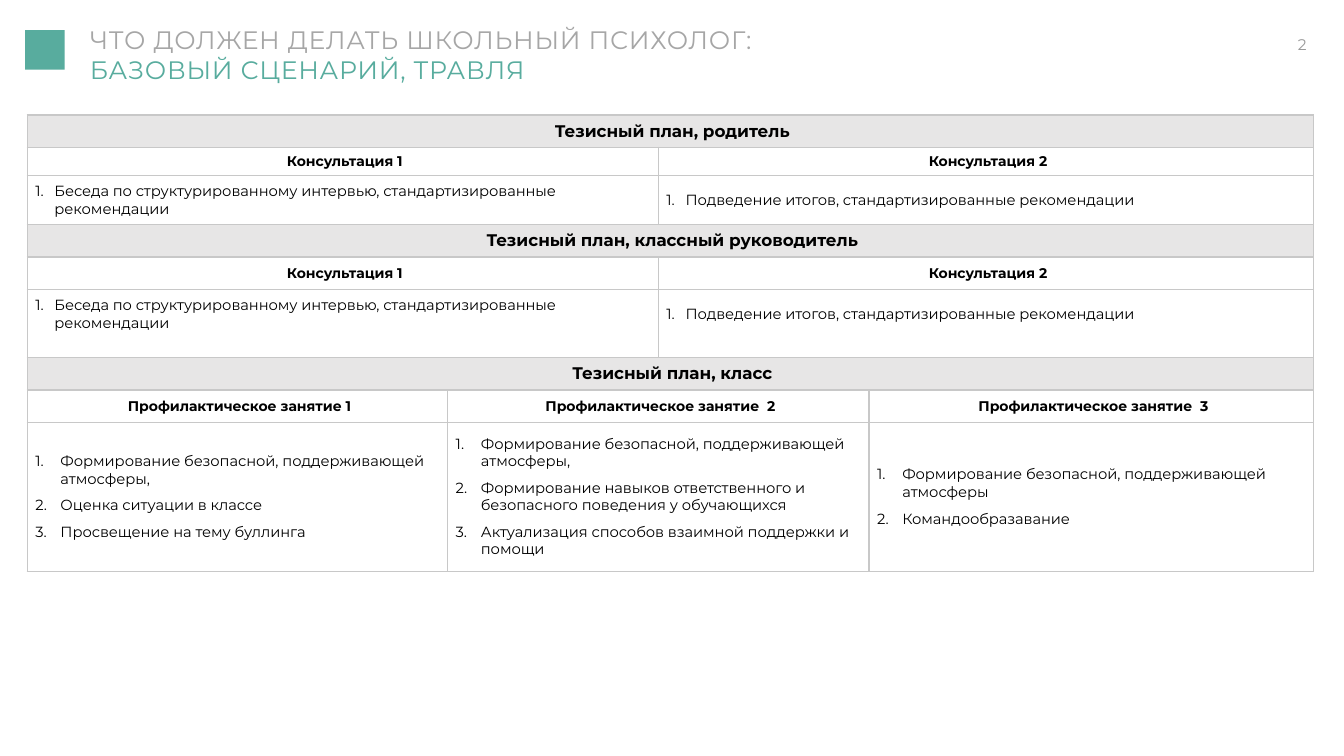
from lxml.etree import SubElement
from pptx import Presentation
from pptx.dml.color import RGBColor
from pptx.enum.shapes import MSO_SHAPE as Shape
from pptx.enum.text import MSO_ANCHOR as Anchor, MSO_AUTO_SIZE as AutoSize, PP_ALIGN as Align
from pptx.oxml.ns import qn
from pptx.util import Inches, Pt

GREEN = RGBColor(0x58, 0xAC, 0x9E)
TITLE_GREY = RGBColor(0xA6, 0xA6, 0xA6)
NUMBER_GREY = RGBColor(0x99, 0x99, 0x99)
BAND_GREY = RGBColor(0xE7, 0xE6, 0xE6)
BORDER_GREY = RGBColor(0xC8, 0xC8, 0xC8)
WHITE = RGBColor(0xFF, 0xFF, 0xFF)
BLACK = RGBColor(0x00, 0x00, 0x00)

CONSULTATIONS = ["Консультация 1", "Консультация 2"]
CONSULTATION_TOPICS = [
    ["Беседа по структурированному интервью, стандартизированные рекомендации"],
    ["Подведение итогов, стандартизированные рекомендации"],
]
LESSONS = [
    "Профилактическое занятие 1",
    "Профилактическое занятие  2",
    "Профилактическое занятие  3",
]
LESSON_TOPICS = [
    [
        "Формирование безопасной, поддерживающей атмосферы,",
        "Оценка ситуации в классе",
        "Просвещение на тему буллинга",
    ],
    [
        "Формирование безопасной, поддерживающей атмосферы,",
        "Формирование навыков ответственного и безопасного поведения у обучающихся",
        "Актуализация способов взаимной поддержки и помощи",
    ],
    [
        "Формирование безопасной, поддерживающей атмосферы",
        "Командообразавание",
    ],
]
PLANS = [
    ("Тезисный план, родитель", CONSULTATIONS, CONSULTATION_TOPICS, 0.04),
    ("Тезисный план, классный руководитель", CONSULTATIONS, CONSULTATION_TOPICS, 0.22),
    ("Тезисный план, класс", LESSONS, LESSON_TOPICS, 0.04),
]
COLUMN_WIDTHS = [4.17, 2.09, 2.09, 4.41]
ROW_HEIGHTS = [0.32, 0.28, 0.49, 0.32, 0.32, 0.68, 0.32, 0.32, 1.48]
SPANS = {1: [(0, 3)], 2: [(0, 1), (2, 3)], 3: [(0, 0), (1, 2), (3, 3)]}


def set_font(para, size, color, bold=False):
    para.font.name = "Montserrat"
    para.font.size = Pt(size)
    para.font.bold = bold
    para.font.color.rgb = color


def fill_cell(cell, lines, size, bold, fill, indent=0, bottom=0.04):
    cell.fill.solid()
    cell.fill.fore_color.rgb = fill
    cell.vertical_anchor = Anchor.MIDDLE
    cell.margin_left = Inches(0.08)
    cell.margin_top = cell.margin_right = Inches(0.04)
    cell.margin_bottom = Inches(bottom)
    cell.text = "\n".join(lines)
    for para in cell.text_frame.paragraphs:
        if indent:
            props = para._p.get_or_add_pPr()
            props.set("marL", str(Inches(indent)))
            props.set("indent", str(-Inches(indent)))
            SubElement(props, qn("a:buFont"), typeface="+mj-lt")
            SubElement(props, qn("a:buAutoNum"), type="arabicPeriod")
            if len(lines) > 1:
                para.space_after = Pt(6)
        else:
            para.alignment = Align.CENTER
        set_font(para, size, BLACK, bold)


deck = Presentation()
deck.slide_width = Inches(13.33)
deck.slide_height = Inches(7.5)
page = deck.slides.add_slide(deck.slide_layouts[5])

number_box = page.shapes.add_textbox(Inches(12.6), Inches(0.35), Inches(0.36), Inches(0.19))
number_frame = number_box.text_frame
number_frame.word_wrap = True
number_frame.margin_left = number_frame.margin_right = 0
number_frame.margin_top = number_frame.margin_bottom = 0
number_frame.text = "2"
number_frame.paragraphs[0].alignment = Align.RIGHT
set_font(number_frame.paragraphs[0], 11, NUMBER_GREY)

table_frame = page.shapes.add_table(
    len(ROW_HEIGHTS), len(COLUMN_WIDTHS), Inches(0.27), Inches(1.14),
    Inches(sum(COLUMN_WIDTHS)), Inches(sum(ROW_HEIGHTS)))
table = table_frame.table
table.first_row = False
table.horz_banding = False
for column, width in zip(table.columns, COLUMN_WIDTHS):
    column.width = Inches(width)
for row, height in zip(table.rows, ROW_HEIGHTS):
    row.height = Inches(height)

for cell in table.iter_cells():
    cell_props = cell._tc.get_or_add_tcPr()
    for side in ("a:lnL", "a:lnR", "a:lnT", "a:lnB"):
        border = SubElement(cell_props, qn(side), w=str(Pt(1)))
        border_fill = SubElement(border, qn("a:solidFill"))
        SubElement(border_fill, qn("a:srgbClr"), val=str(BORDER_GREY))

for plan_index, (heading, meetings, topics, bottom) in enumerate(PLANS):
    top = plan_index * 3
    for offset, entries in enumerate(([heading], meetings, topics)):
        for (first, last), entry in zip(SPANS[len(entries)], entries):
            cell = table.cell(top + offset, first)
            if last > first:
                cell.merge(table.cell(top + offset, last))
            if offset == 0:
                fill_cell(cell, [entry], 12, True, BAND_GREY)
            elif offset == 1:
                fill_cell(cell, [entry], 10, True, WHITE)
            else:
                indent = 0.25 if len(entries) == 3 else 0.19
                fill_cell(cell, entry, 10.5, False, WHITE, indent, bottom)

title = page.shapes.title
title.left, title.top = Inches(0.79), Inches(0.19)
title.width, title.height = Inches(11.81), Inches(0.71)
title_frame = title.text_frame
title_frame.auto_size = AutoSize.NONE
title_frame.vertical_anchor = Anchor.TOP
title_frame.text = "ЧТО ДОЛЖЕН ДЕЛАТЬ ШКОЛЬНЫЙ ПСИХОЛОГ:\nБАЗОВЫЙ СЦЕНАРИЙ, ТРАВЛЯ"
for para, color in zip(title_frame.paragraphs, (TITLE_GREY, GREEN)):
    para.alignment = Align.LEFT
    set_font(para, 18, color)
    for span in para.runs:
        span._r.get_or_add_rPr().set("spc", "50")

marker = page.shapes.add_shape(Shape.RECTANGLE, Inches(0.25), Inches(0.3), Inches(0.39), Inches(0.39))
marker.shadow.inherit = False
marker.fill.solid()
marker.fill.fore_color.rgb = GREEN
marker.line.fill.background()

deck.save("out.pptx")
